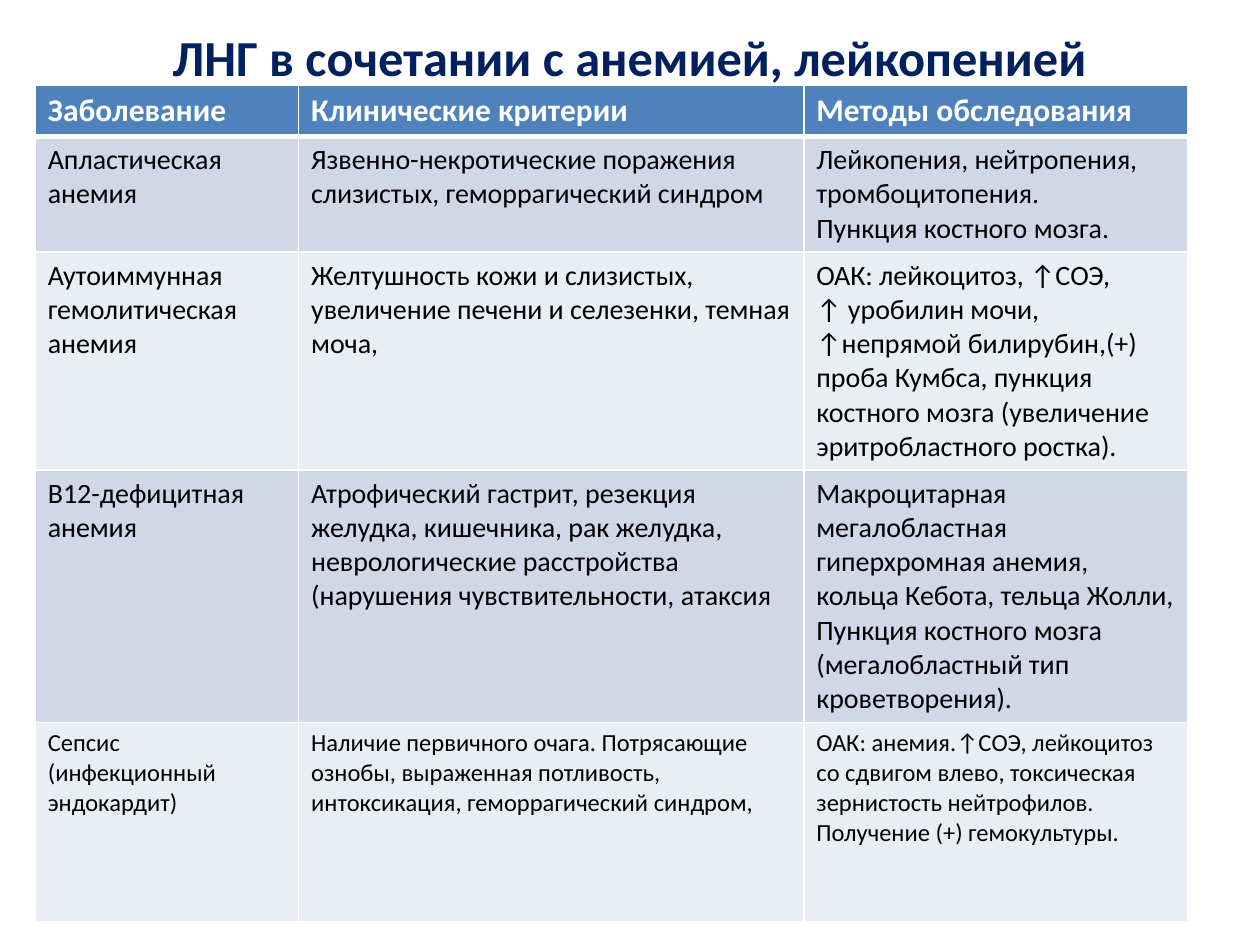
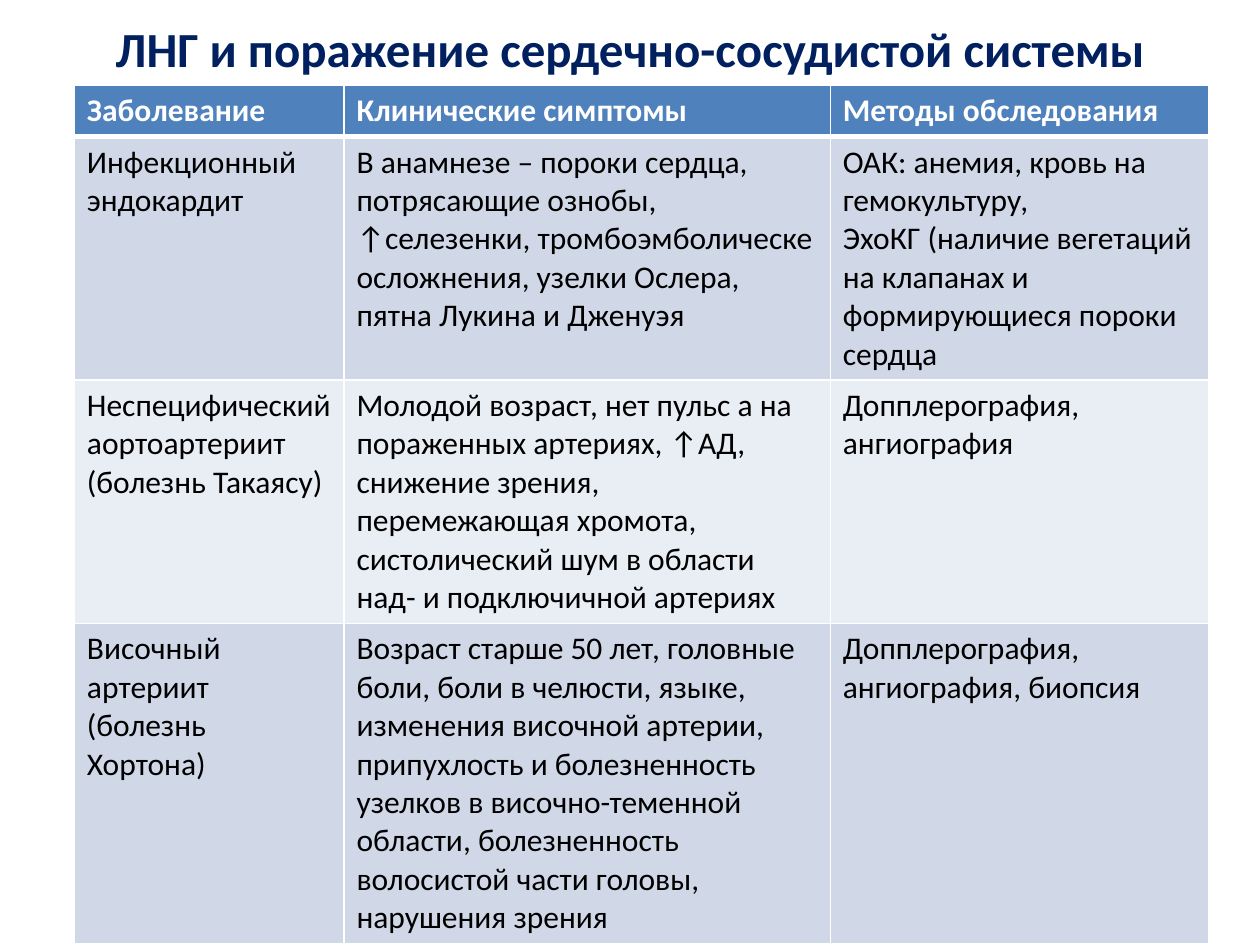
from dataclasses import dataclass

from lxml.etree import SubElement
from pptx import Presentation
from pptx.dml.color import RGBColor
from pptx.enum.text import MSO_ANCHOR, MSO_AUTO_SIZE, PP_ALIGN
from pptx.oxml.ns import qn
from pptx.util import Inches, Pt


@dataclass(frozen=True)
class Theme:
    """Colours, font and type sizes shared by the slides."""

    font: str = "Calibri"
    title: str = "002060"
    header_fill: str = "4F81BD"
    header_text: str = "FFFFFF"
    body_text: str = "000000"
    bands: tuple = ("D0D8E8", "E9EDF4")
    border: str = "FFFFFF"
    border_width: float = 1
    header_rule: float = 3
    header_size: float = 18


@dataclass(frozen=True)
class DiseaseTable:
    """One slide's title, table geometry and wording."""

    title: str
    title_box: tuple
    title_size: float
    origin: tuple
    columns: tuple
    row_heights: tuple
    row_sizes: tuple
    header: tuple
    rows: tuple


THEME = Theme()

ANEMIA = DiseaseTable(
    title="ЛНГ в сочетании с анемией, лейкопенией",
    title_box=(0.5, 0.3, 9, 0.3),
    title_size=28.8,
    origin=(0.28, 0.68),
    columns=(2.09, 4.01, 3.05),
    row_heights=(0.37, 0.83, 1.56, 1.8, 1.58),
    row_sizes=(16, 16, 16, 14),
    header=("Заболевание", "Клинические критерии", "Методы обследования"),
    rows=(
        ("Апластическая анемия",
         "Язвенно-некротические поражения слизистых, геморрагический синдром",
         "Лейкопения, нейтропения, тромбоцитопения.\nПункция костного мозга."),
        ("Аутоиммунная гемолитическая анемия",
         "Желтушность кожи и слизистых, увеличение печени и селезенки, темная моча,",
         "ОАК: лейкоцитоз, ↑СОЭ,\n↑ уробилин мочи, ↑непрямой билирубин,(+) проба Кумбса, "
         "пункция костного мозга (увеличение эритробластного ростка)."),
        ("В12-дефицитная анемия",
         "Атрофический гастрит, резекция желудка, кишечника, рак желудка, "
         "неврологические расстройства (нарушения чувствительности, атаксия",
         "Макроцитарная мегалобластная гиперхромная анемия, кольца Кебота, тельца Жолли,\n"
         "Пункция костного мозга (мегалобластный тип кроветворения)."),
        ("Сепсис\n(инфекционный эндокардит)",
         "Наличие первичного очага. Потрясающие ознобы, выраженная потливость, "
         "интоксикация, геморрагический синдром,",
         "ОАК: анемия.↑СОЭ, лейкоцитоз со сдвигом влево, токсическая зернистость "
         "нейтрофилов.\nПолучение (+) гемокультуры."),
    ),
)

CARDIOVASCULAR = DiseaseTable(
    title="ЛНГ и поражение сердечно-сосудистой системы",
    title_box=(0.5, 0, 9, 0.76),
    title_size=28,
    origin=(0.59, 0.68),
    columns=(2.14, 3.86, 3),
    row_heights=(0.4, 1.9, 1.9, 2.5),
    row_sizes=(18, 18, 18),
    header=("Заболевание", "Клинические симптомы", "Методы обследования"),
    rows=(
        ("Инфекционный эндокардит",
         "В анамнезе – пороки сердца, потрясающие ознобы, ↑селезенки, тромбоэмболическе "
         "осложнения, узелки Ослера, пятна Лукина и Дженуэя",
         "ОАК: анемия, кровь на гемокультуру,\n"
         "ЭхоКГ (наличие вегетаций на клапанах и формирующиеся пороки сердца"),
        ("Неспецифический аортоартериит (болезнь Такаясу)",
         "Молодой возраст, нет пульс а на пораженных артериях, ↑АД, снижение зрения, "
         "перемежающая хромота, систолический шум в области над- и подключичной артериях",
         "Допплерография, ангиография"),
        ("Височный артериит (болезнь Хортона)",
         "Возраст старше 50 лет, головные боли, боли в челюсти, языке, изменения височной "
         "артерии, припухлость и болезненность узелков в височно-теменной области, "
         "болезненность волосистой части головы, нарушения зрения",
         "Допплерография, ангиография, биопсия"),
    ),
)


def write_text(text_frame, text, size, color, bold, alignment=PP_ALIGN.LEFT):
    """Write each line of the text as a paragraph with one formatted run."""
    for index, line in enumerate(text.split("\n")):
        paragraph = text_frame.add_paragraph() if index else text_frame.paragraphs[0]
        paragraph.alignment = alignment
        run = paragraph.add_run()
        run.text = line
        run.font.name = THEME.font
        run.font.size = Pt(size)
        run.font.bold = bold
        run.font.color.rgb = RGBColor.from_string(color)


def set_borders(cell, bottom_width):
    """Draw the four cell borders, with a chosen width for the bottom one."""
    properties = cell._tc.get_or_add_tcPr()
    widths = dict.fromkeys(("a:lnL", "a:lnR", "a:lnT"), THEME.border_width)
    widths["a:lnB"] = bottom_width
    for tag, width in widths.items():
        line = SubElement(properties, qn(tag), w=str(Pt(width)))
        fill = SubElement(line, qn("a:solidFill"))
        SubElement(fill, qn("a:srgbClr"), val=THEME.border)


def format_cell(cell, text, size, fill, color, is_header=False):
    """Fill, outline and write one table cell."""
    set_borders(cell, THEME.header_rule if is_header else THEME.border_width)
    cell.fill.solid()
    cell.fill.fore_color.rgb = RGBColor.from_string(fill)
    write_text(cell.text_frame, text, size, color, is_header)


def place_title(slide, text, size, box):
    """Move and format the title placeholder."""
    title = slide.shapes.title
    title.left, title.top, title.width, title.height = map(Inches, box)
    title.text_frame.auto_size = MSO_AUTO_SIZE.NONE
    title.text_frame.vertical_anchor = MSO_ANCHOR.MIDDLE
    write_text(title.text_frame, text, size, THEME.title, True, PP_ALIGN.CENTER)


def place_table(slide, content):
    """Add the header row and the banded disease rows."""
    left, top = content.origin
    box = (left, top, sum(content.columns), sum(content.row_heights))
    frame = slide.shapes.add_table(
        len(content.row_heights), len(content.columns), *map(Inches, box))
    table = frame.table
    for column, width in zip(table.columns, content.columns):
        column.width = Inches(width)
    for row, height in zip(table.rows, content.row_heights):
        row.height = Inches(height)
    for cell, text in zip(table.rows[0].cells, content.header):
        format_cell(cell, text, THEME.header_size, THEME.header_fill,
                    THEME.header_text, is_header=True)
    for index, (texts, size) in enumerate(zip(content.rows, content.row_sizes)):
        band = THEME.bands[index % len(THEME.bands)]
        for cell, text in zip(table.rows[index + 1].cells, texts):
            format_cell(cell, text, size, band, THEME.body_text)


def add_disease_slide(presentation, content):
    """Add a title-only slide holding one disease table."""
    slide = presentation.slides.add_slide(presentation.slide_layouts[5])
    place_title(slide, content.title, content.title_size, content.title_box)
    place_table(slide, content)


def main():
    """Build and save the presentation."""
    presentation = Presentation()
    presentation.slide_width = Inches(10)
    presentation.slide_height = Inches(7.5)
    for content in (ANEMIA, CARDIOVASCULAR):
        add_disease_slide(presentation, content)
    presentation.save("out.pptx")


if __name__ == "__main__":
    main()
